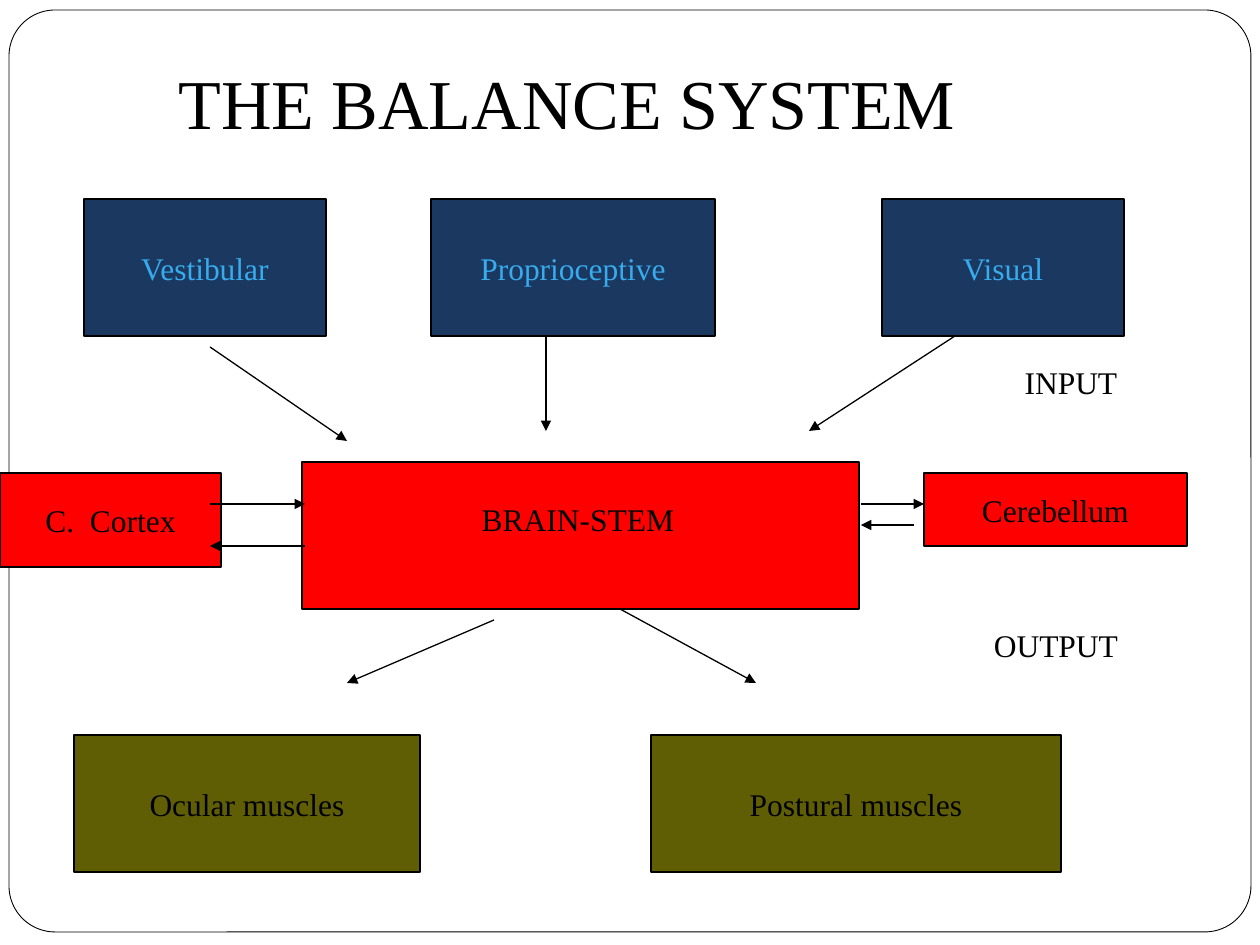
import pptx
import pptx.util
import pptx.dml.color
import pptx.enum.shapes
import pptx.enum.text
import pptx.oxml
import pptx.oxml.ns

PX = 914400 // 126
FONT = "Times New Roman"
COLORS = {
    "paper": "FFFFFF", "ink": "000000", "input": "1B3861",
    "input_text": "38ABED", "brain": "FF0000", "output": "605E04",
}

# Content: text, (left, top, width, height) in px, fill, text colour
FRAME = (9, 10, 1242, 922)
BRAIN_STEM = (302, 462, 557, 147)
BOXES = [
    ("Vestibular", (84, 199, 242, 137), "input", "input_text"),
    ("Proprioceptive", (431, 199, 284, 137), "input", "input_text"),
    ("Visual", (882, 199, 242, 137), "input", "input_text"),
    ("C.  Cortex", (0, 473, 221, 94), "brain", "ink"),
    ("Cerebellum", (924, 473, 263, 73), "brain", "ink"),
    ("Ocular muscles", (74, 735, 346, 137), "output", "ink"),
    ("Postural muscles", (651, 735, 410, 137), "output", "ink"),
]
LABELS = [
    ("THE BALANCE SYSTEM", (147, 53, 840, 92), 40),
    ("BRAIN-STEM", (305, 494, 546, 48), 18),
    ("INPUT", (945, 357, 252, 48), 18),
    ("OUTPUT", (935, 620, 242, 48), 18),
]
ARROWS = [
    # senses to brain-stem
    ((210, 347), (347, 441)), ((546, 336), (546, 431)), ((955, 336), (809, 431)),
    # brain-stem to muscles
    ((494, 620), (347, 683)), ((620, 609), (756, 683)),
    # cortex and brain-stem
    ((210, 504), (305, 504)), ((305, 546), (210, 546)),
    # brain-stem and cerebellum
    ((861, 504), (924, 504)), ((914, 525), (861, 525)),
]


def color(name):
    return pptx.dml.color.RGBColor.from_string(COLORS[name])


def scaled(lengths):
    return [length * PX for length in lengths]


def write(box, text, size=18, ink="ink", anchor="MIDDLE", wrap=True):
    frame = box.text_frame
    frame.word_wrap = wrap
    frame.vertical_anchor = pptx.enum.text.MSO_ANCHOR[anchor]
    frame.margin_left = frame.margin_right = pptx.util.Inches(0.05)
    frame.margin_top = frame.margin_bottom = pptx.util.Inches(0.05)
    para = frame.paragraphs[0]
    para.alignment = pptx.enum.text.PP_ALIGN.CENTER
    span = para.add_run()
    span.text = text
    span.font.name = FONT
    span.font.size = pptx.util.Pt(size)
    span.font.color.rgb = color(ink)


def add_box(page, place, fill, kind="RECTANGLE", weight=0.75):
    shape_type = pptx.enum.shapes.MSO_SHAPE[kind]
    box = page.shapes.add_shape(shape_type, *scaled(place))
    box.shadow.inherit = False
    box.fill.solid()
    box.fill.fore_color.rgb = color(fill)
    box.line.color.rgb = color("ink")
    box.line.width = pptx.util.Pt(weight)
    return box


def add_arrow(page, start, end):
    straight = pptx.enum.shapes.MSO_CONNECTOR.STRAIGHT
    arrow = page.shapes.add_connector(straight, *scaled(start + end))
    arrow.line.color.rgb = color("ink")
    arrow.line.width = pptx.util.Pt(0.75)
    head = pptx.oxml.parse_xml(
        f'<a:tailEnd {pptx.oxml.ns.nsdecls("a")} type="triangle"/>')
    arrow.line._get_or_add_ln().append(head)
    no_shadow = pptx.oxml.parse_xml(f'<a:effectLst {pptx.oxml.ns.nsdecls("a")}/>')
    arrow._element.spPr.append(no_shadow)


def main():
    deck = pptx.Presentation()
    deck.slide_width = pptx.util.Inches(10)
    deck.slide_height = pptx.util.Inches(7.5)
    page = deck.slides.add_slide(deck.slide_layouts[6])

    # Rounded page border
    border = add_box(page, FRAME, "paper", kind="ROUNDED_RECTANGLE", weight=0.5)
    border.adjustments[0] = 0.05

    # Boxes of the diagram
    add_box(page, BRAIN_STEM, "brain")
    for text, place, fill, ink in BOXES:
        write(add_box(page, place, fill), text, ink=ink, wrap=False)

    # Arrows
    for start, end in ARROWS:
        add_arrow(page, start, end)

    # Title and labels
    for text, place, size in LABELS:
        label = page.shapes.add_textbox(*scaled(place))
        write(label, text, size=size, anchor="TOP")

    deck.save("out.pptx")


if __name__ == "__main__":
    main()
